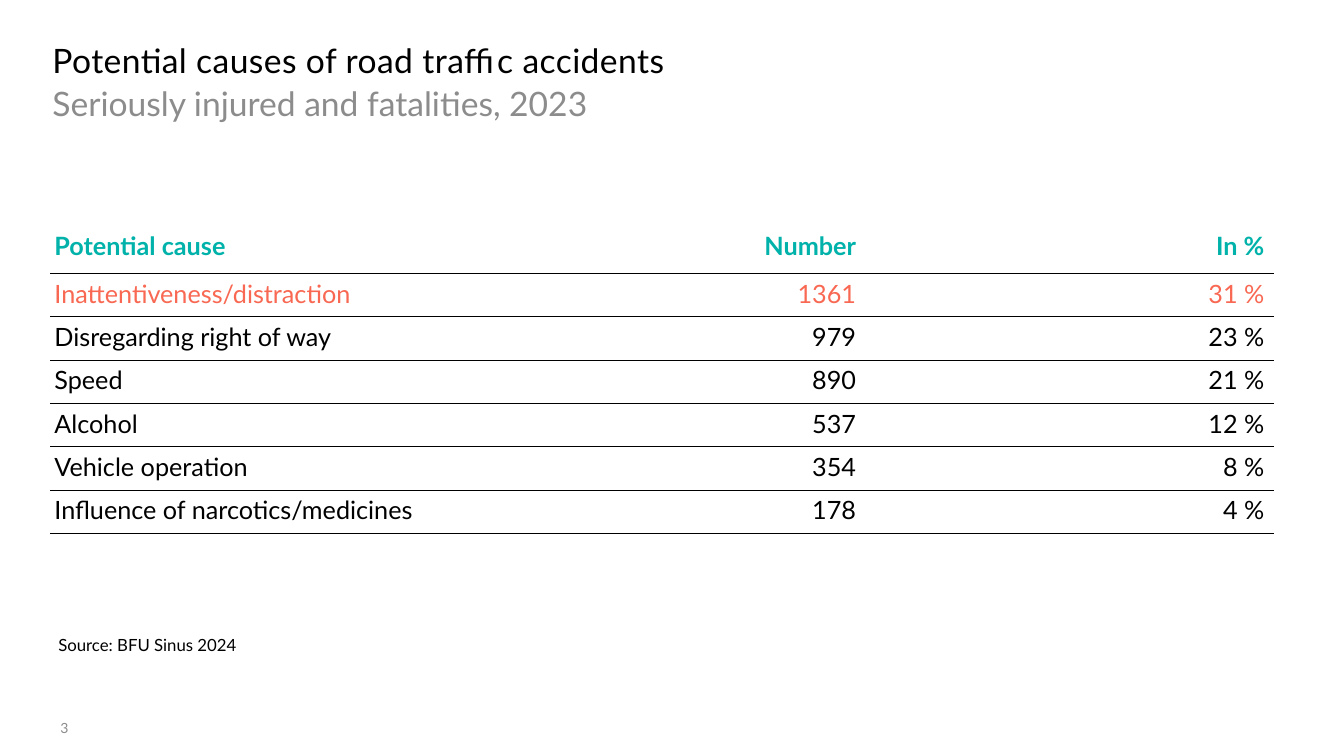
from pptx import Presentation
from pptx import util as u
from pptx.dml.color import RGBColor
from pptx.enum import text
from pptx.oxml.ns import qn
from lxml import etree

WIDTH, HEIGHT = 13.33, 7.5
FONT = "Lato"
COLORS = {"ink": "000000", "muted": "8C8C8C", "teal": "00B2AA", "coral": "F86852"}
COLUMNS = [6.43, 1.66, 4.05]
HEADER_HEIGHT, ROW_HEIGHT = 0.47, 0.43
CAUSES = [
    ("Potential cause", "Number", "In %"),
    ("Inattentiveness/distraction", "1361", "31 %"),
    ("Disregarding right of way", "979", "23 %"),
    ("Speed", "890", "21 %"),
    ("Alcohol", "537", "12 %"),
    ("Vehicle operation", "354", "8 %"),
    ("Influence of narcotics/medicines", "178", "4 %"),
]
ROW_STYLES = {0: ("teal", True), 1: ("coral", False)}


def apply(target, formats):
    for name, value in formats.items():
        setattr(target, name, value)


def write(paragraph, content, size, color, bold=False):
    run = paragraph.add_run()
    run.text = content
    apply(run.font, {"name": FONT, "size": u.Pt(size), "bold": bold})
    run.font.color.rgb = RGBColor.from_string(COLORS[color])
    return run


def add_text(slide, box, content, size, color, insets=(0, 0), **spacing):
    shape = slide.shapes.add_textbox(*(u.Inches(length) for length in box))
    side, edge = (u.Inches(inset) for inset in insets)
    apply(shape.text_frame, {
        "word_wrap": True, "vertical_anchor": text.MSO_ANCHOR.TOP,
        "margin_left": side, "margin_right": side,
        "margin_top": edge, "margin_bottom": edge,
    })
    paragraph = shape.text_frame.paragraphs[0]
    apply(paragraph, spacing)
    return write(paragraph, content, size, color)


def set_border(cell, side, visible):
    properties = cell._tc.get_or_add_tcPr()
    line = etree.SubElement(properties, qn(f"a:ln{side}"), w=str(u.Pt(0.5)))
    if visible:
        fill = etree.SubElement(line, qn("a:solidFill"))
        etree.SubElement(fill, qn("a:srgbClr"), val=COLORS["ink"])
    else:
        etree.SubElement(line, qn("a:noFill"))


def fill_cell(cell, content, row, column):
    color, bold = ROW_STYLES.get(row, ("ink", False))
    apply(cell, {
        "margin_left": u.Inches(0.04), "margin_right": u.Inches(0.1),
        "margin_top": u.Inches(0.05), "margin_bottom": u.Inches(0.05),
        "vertical_anchor": text.MSO_ANCHOR.TOP,
    })
    for side, visible in {"L": False, "R": False, "T": row > 0, "B": True}.items():
        set_border(cell, side, visible)
    cell.fill.background()
    paragraph = cell.text_frame.paragraphs[0]
    paragraph.alignment = text.PP_ALIGN.RIGHT if column else text.PP_ALIGN.LEFT
    write(paragraph, content, 18, color, bold)


def add_cause_table(slide, left, top):
    heights = [HEADER_HEIGHT] + [ROW_HEIGHT] * (len(CAUSES) - 1)
    lengths = (left, top, sum(COLUMNS), sum(heights))
    table = slide.shapes.add_table(
        len(CAUSES), len(COLUMNS), *(u.Inches(length) for length in lengths)).table
    table.horz_banding = False
    for column, width in zip(table.columns, COLUMNS):
        column.width = u.Inches(width)
    for row, height in zip(table.rows, heights):
        row.height = u.Inches(height)
    for row, values in enumerate(CAUSES):
        for column, content in enumerate(values):
            fill_cell(table.cell(row, column), content, row, column)


def main():
    presentation = Presentation()
    apply(presentation, {"slide_width": u.Inches(WIDTH), "slide_height": u.Inches(HEIGHT)})
    slide = presentation.slides.add_slide(presentation.slide_layouts[6])
    title = add_text(slide, (0.52, 0.4, 12.28, 0.35),
                     "Potential causes of road traffic accidents", 24, "ink")
    title.font._element.set("spc", "30")
    add_text(slide, (0.52, 0.8, 12.28, 0.39), "Seriously injured and fatalities, 2023",
             24, "muted", line_spacing=1.05, space_after=u.Pt(12))
    add_cause_table(slide, 0.5, 2.24)
    add_text(slide, (0.48, 6.25, 12.43, 0.3), "Source: BFU Sinus 2024", 12, "ink",
             insets=(0.1, 0.05), space_after=u.Pt(6))
    add_text(slide, (0.6, 7.14, 0.89, 0.18), "3", 10, "muted")
    presentation.save("out.pptx")


if __name__ == "__main__":
    main()
